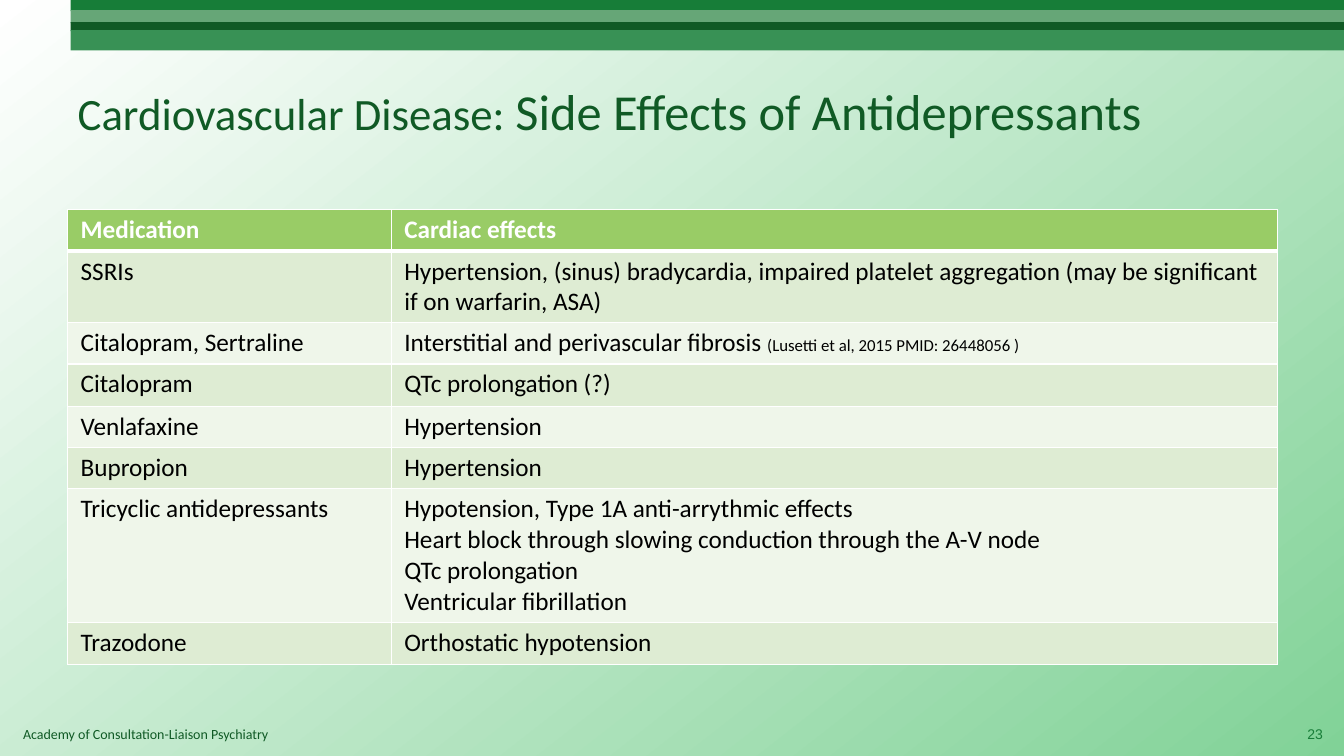
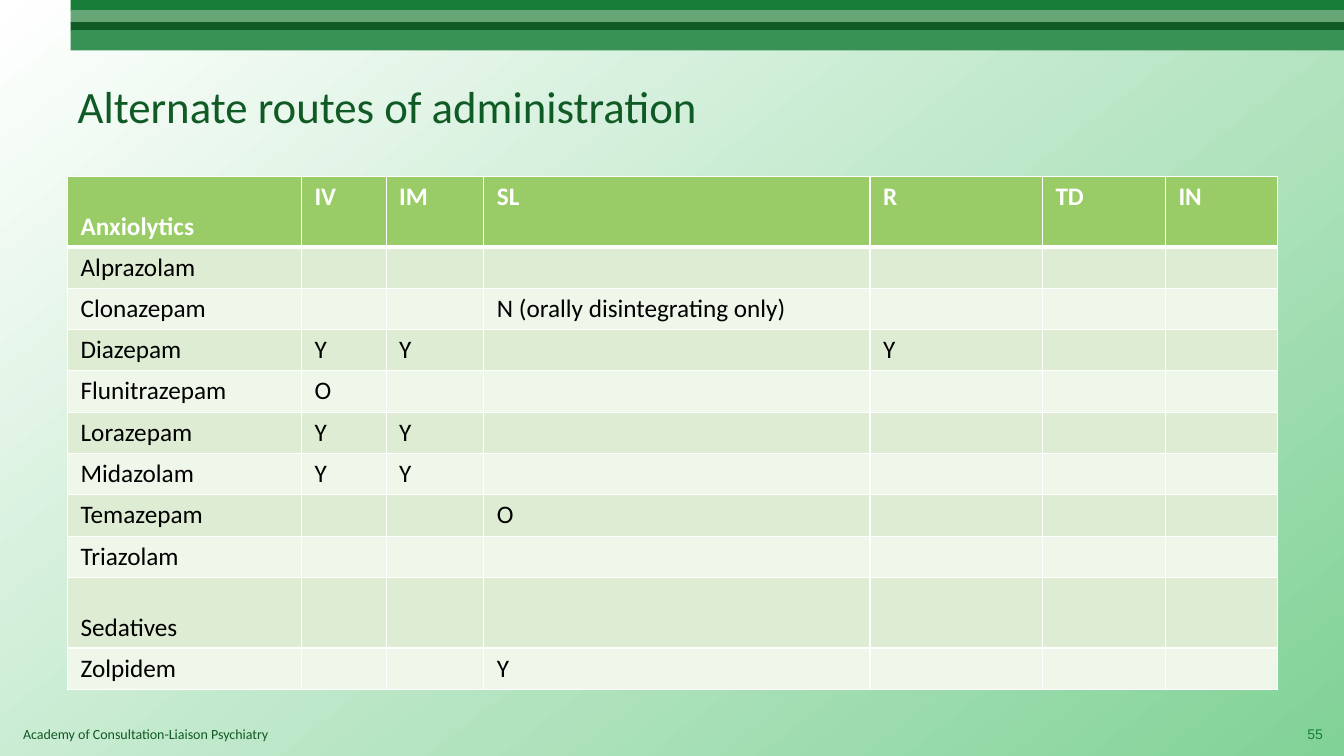
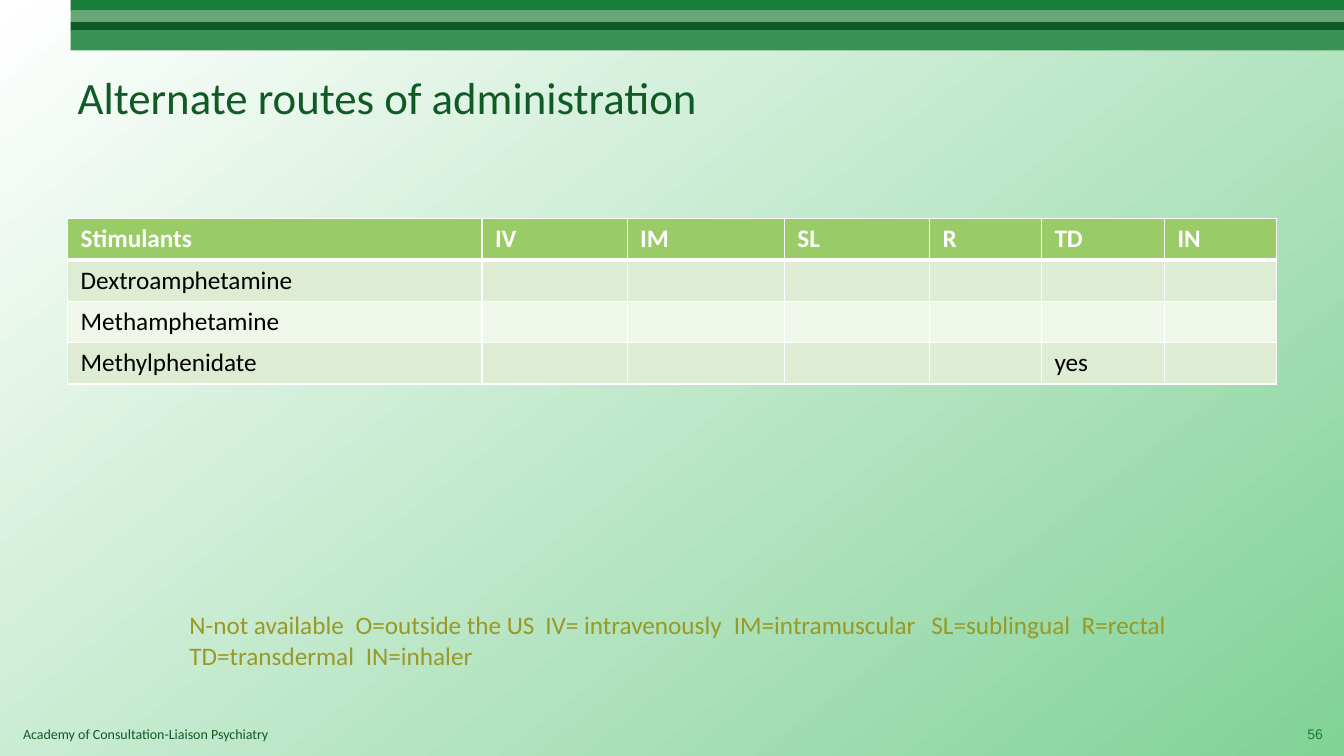
from dataclasses import dataclass

from lxml import etree
from pptx import Presentation
from pptx.dml.color import RGBColor
from pptx.enum.shapes import MSO_SHAPE
from pptx.enum.text import MSO_ANCHOR, MSO_AUTO_SIZE, PP_ALIGN
from pptx.oxml.ns import qn
from pptx.util import Inches, Pt


# Colours, fonts and type sizes
@dataclass(frozen=True)
class Theme:
    font: str = "Calibri"
    number_font: str = "Arial"
    dark: str = "105A25"
    green: str = "177D38"
    back_from: str = "FFFFFF"
    back_to: str = "81D297"
    header: str = "99CC66"
    stripes: tuple = ("DEECD3", "EFF6EA")
    white: str = "FFFFFF"
    black: str = "000000"
    legend: str = "999926"
    title_size: int = 32
    title_large: int = 36
    body_size: int = 18
    cite_size: int = 12
    small_size: int = 10


THEME = Theme()
WIDTH, HEIGHT = 13.33, 7.5
LEFT, CONTENT_WIDTH = 0.67, 12
BAND_LEFT = 0.7
BANDS = [  # top, height, colour
    (0, 0.11, THEME.green),
    (0.1, 0.13, "66A677"),
    (0.22, 0.09, THEME.dark),
    (0.3, 0.2, "389155"),
]
ROW, TALL_ROW = 0.41, 0.7
ROUTES = ["IV", "IM", "SL", "R", "TD", "IN"]


# Text
def add_run(para, text, size, colour, font=THEME.font, bold=False):
    span = para.add_run()
    span.text = text
    span.font.name = font
    span.font.size = Pt(size)
    span.font.bold = bold
    span.font.color.rgb = RGBColor.from_string(colour)


def add_text_box(page, left, top, width, height):
    box = page.shapes.add_textbox(*map(Inches, (left, top, width, height)))
    box.text_frame.word_wrap = True
    return box


def add_title(page, top, spans):
    title = page.shapes.title
    title.left, title.top = Inches(LEFT), Inches(top)
    title.width, title.height = Inches(CONTENT_WIDTH), Inches(1.25)
    frame = title.text_frame
    frame.auto_size = MSO_AUTO_SIZE.NONE
    frame.vertical_anchor = MSO_ANCHOR.MIDDLE
    para = frame.paragraphs[0]
    para.alignment = PP_ALIGN.LEFT
    for text, size in spans:
        add_run(para, text, size, THEME.dark)


def add_page_number(page, number):
    frame = add_text_box(page, 12.69, 7.08, 0.53, 0.4).text_frame
    frame.vertical_anchor = MSO_ANCHOR.MIDDLE
    para = frame.paragraphs[0]
    para.alignment = PP_ALIGN.RIGHT
    add_run(para, str(number), THEME.small_size, THEME.green, THEME.number_font)


def add_legend(page, lines):
    """Each line holds its tab stops in inches and its entries."""
    frame = add_text_box(page, 1.78, 6, 10.22, 0.71).text_frame
    for index, (stops, entries) in enumerate(lines):
        para = frame.add_paragraph() if index else frame.paragraphs[0]
        tabs = etree.SubElement(para._p.get_or_add_pPr(), qn("a:tabLst"))
        for stop in stops:
            etree.SubElement(tabs, qn("a:tab"), pos=str(Inches(stop)), algn="l")
        add_run(para, "\t".join(entries), THEME.body_size, THEME.legend)


# Tables
def set_borders(cell, top, bottom):
    properties = cell._tc.get_or_add_tcPr()
    for side, points in (("L", 1), ("R", 1), ("T", top), ("B", bottom)):
        line = etree.SubElement(properties, qn(f"a:ln{side}"), w=str(Pt(points)))
        fill = etree.SubElement(line, qn("a:solidFill"))
        etree.SubElement(fill, qn("a:srgbClr"), val=THEME.white)


def fill_cell(cell, content, row):
    """Content is a text with line ends, or a list of (text, size) spans."""
    is_header = row == 0
    set_borders(cell, 3 if row == 1 else 1, 3 if is_header else 1)
    cell.fill.solid()
    cell.fill.fore_color.rgb = RGBColor.from_string(
        THEME.header if is_header else THEME.stripes[(row - 1) % 2])
    cell.margin_left = cell.margin_right = Inches(0.13)
    cell.margin_top = cell.margin_bottom = Inches(0.05)
    if isinstance(content, str):
        lines = [[(line, THEME.body_size)] for line in content.split("\n")]
    else:
        lines = [content]
    for index, spans in enumerate(lines):
        frame = cell.text_frame
        para = frame.add_paragraph() if index else frame.paragraphs[0]
        para.font.size = Pt(THEME.body_size)
        for text, size in spans:
            if text:
                add_run(para, text, size,
                        THEME.white if is_header else THEME.black, bold=is_header)


def add_grid(page, top, widths, heights, rows):
    frame = page.shapes.add_table(
        len(rows), len(widths), Inches(LEFT), Inches(top),
        Inches(CONTENT_WIDTH), Inches(sum(heights)))
    table = frame.table
    table.horz_banding = False
    for column, width in zip(table.columns, widths):
        column.width = Inches(width)
    for row, height in zip(table.rows, heights):
        row.height = Inches(height)
    for r, contents in enumerate(rows):
        for c, content in enumerate(contents):
            fill_cell(table.cell(r, c), content, r)
    return table


def route_row(name, **routes):
    return [name] + [routes.get(route, "") for route in ROUTES]


# Shared master: background, bands and footer
def move_to_master(shape, master, number):
    shape.element.nvSpPr.cNvPr.set("id", str(100 + number))
    master.element.cSld.spTree.append(shape.element)


def build_master(master, page):
    fill = master.background.fill
    fill.gradient()
    fill.gradient_angle = 360 - 52
    colours = (THEME.back_from, THEME.back_to)
    for position, (stop, colour) in enumerate(zip(fill.gradient_stops, colours)):
        stop.position = position
        stop.color.rgb = RGBColor.from_string(colour)

    for number, (top, height, colour) in enumerate(BANDS):
        band = page.shapes.add_shape(
            MSO_SHAPE.RECTANGLE, Inches(BAND_LEFT), Inches(top),
            Inches(WIDTH - BAND_LEFT), Inches(height))
        band.shadow.inherit = False
        band.fill.solid()
        band.fill.fore_color.rgb = RGBColor.from_string(colour)
        band.line.fill.background()
        move_to_master(band, master, number)

    footer = add_text_box(page, 0.13, 7.15, 9.25, 0.27)
    add_run(footer.text_frame.paragraphs[0],
            "Academy of Consultation-Liaison Psychiatry",
            THEME.small_size, THEME.dark)
    move_to_master(footer, master, len(BANDS))


# Slides
def build_side_effects(page):
    add_title(page, 0.47, [("Cardiovascular Disease: ", THEME.title_size),
                           ("Side Effects of Antidepressants", THEME.title_large)])
    rows = [
        ["Medication", "Cardiac effects"],
        ["SSRIs", "Hypertension, (sinus) bradycardia, impaired platelet "
                  "aggregation (may be significant if on warfarin, ASA)"],
        ["Citalopram, Sertraline",
         [("Interstitial and perivascular fibrosis ", THEME.body_size),
          ("(Lusetti et al, 2015 PMID: 26448056 )", THEME.cite_size)]],
        ["Citalopram", "QTc prolongation (?)"],
        ["Venlafaxine", "Hypertension"],
        ["Bupropion", "Hypertension"],
        ["Tricyclic antidepressants",
         "Hypotension, Type 1A anti-arrythmic effects\n"
         "Heart block through slowing conduction through the A-V node\n"
         "QTc prolongation\n"
         "Ventricular fibrillation"],
        ["Trazodone", "Orthostatic hypotension"],
    ]
    heights = [ROW, 0.71, ROW, 0.42, ROW, ROW, 1.33, ROW]
    add_grid(page, 2.08, [3.21, 8.79], heights, rows)
    add_page_number(page, 23)


def build_anxiolytics(page):
    add_title(page, 0.42, [("Alternate routes of administration", THEME.title_size)])
    rows = [
        ["Anxiolytics"] + ROUTES,
        route_row("Alprazolam"),
        route_row("Clonazepam", SL="N (orally disintegrating only)"),
        route_row("Diazepam", IV="Y", IM="Y", R="Y"),
        route_row("Flunitrazepam", IV="O"),
        route_row("Lorazepam", IV="Y", IM="Y"),
        route_row("Midazolam", IV="Y", IM="Y"),
        route_row("Temazepam", SL="O"),
        route_row("Triazolam"),
        route_row("Sedatives"),
        route_row("Zolpidem", SL="Y"),
    ]
    groups = [r for r, row in enumerate(rows) if row[0] in ("Anxiolytics", "Sedatives")]
    heights = [TALL_ROW if r in groups else ROW for r in range(len(rows))]
    table = add_grid(page, 1.75, [2.32, 0.84, 0.97, 3.83, 1.71, 1.22, 1.11],
                     heights, rows)
    for r in groups:
        table.cell(r, 0).vertical_anchor = MSO_ANCHOR.BOTTOM
    add_page_number(page, 55)


def build_stimulants(page):
    add_title(page, 0.33, [("Alternate routes of administration", THEME.title_size)])
    rows = [
        ["Stimulants"] + ROUTES,
        route_row("Dextroamphetamine"),
        route_row("Methamphetamine"),
        route_row("Methylphenidate", TD="yes"),
    ]
    add_grid(page, 2.17, [4.11, 1.44, 1.56, 1.44, 1.11, 1.22, 1.11],
             [ROW] * len(rows), rows)
    add_page_number(page, 56)
    add_legend(page, [
        ([1.65, 3.53, 5.4, 7.36, 8.85],
         ["N-not available", "O=outside the US", "IV= intravenously",
          "IM=intramuscular", "SL=sublingual", "R=rectal"]),
        ([1.75], ["TD=transdermal", "IN=inhaler"]),
    ])


def main():
    deck = Presentation()
    deck.slide_width, deck.slide_height = Inches(WIDTH), Inches(HEIGHT)
    title_only = deck.slide_layouts.get_by_name("Title Only")
    builders = [build_side_effects, build_anxiolytics, build_stimulants]
    pages = [deck.slides.add_slide(title_only) for _ in builders]
    build_master(deck.slide_master, pages[0])
    for build, page in zip(builders, pages):
        build(page)
    deck.save("out.pptx")


if __name__ == "__main__":
    main()
